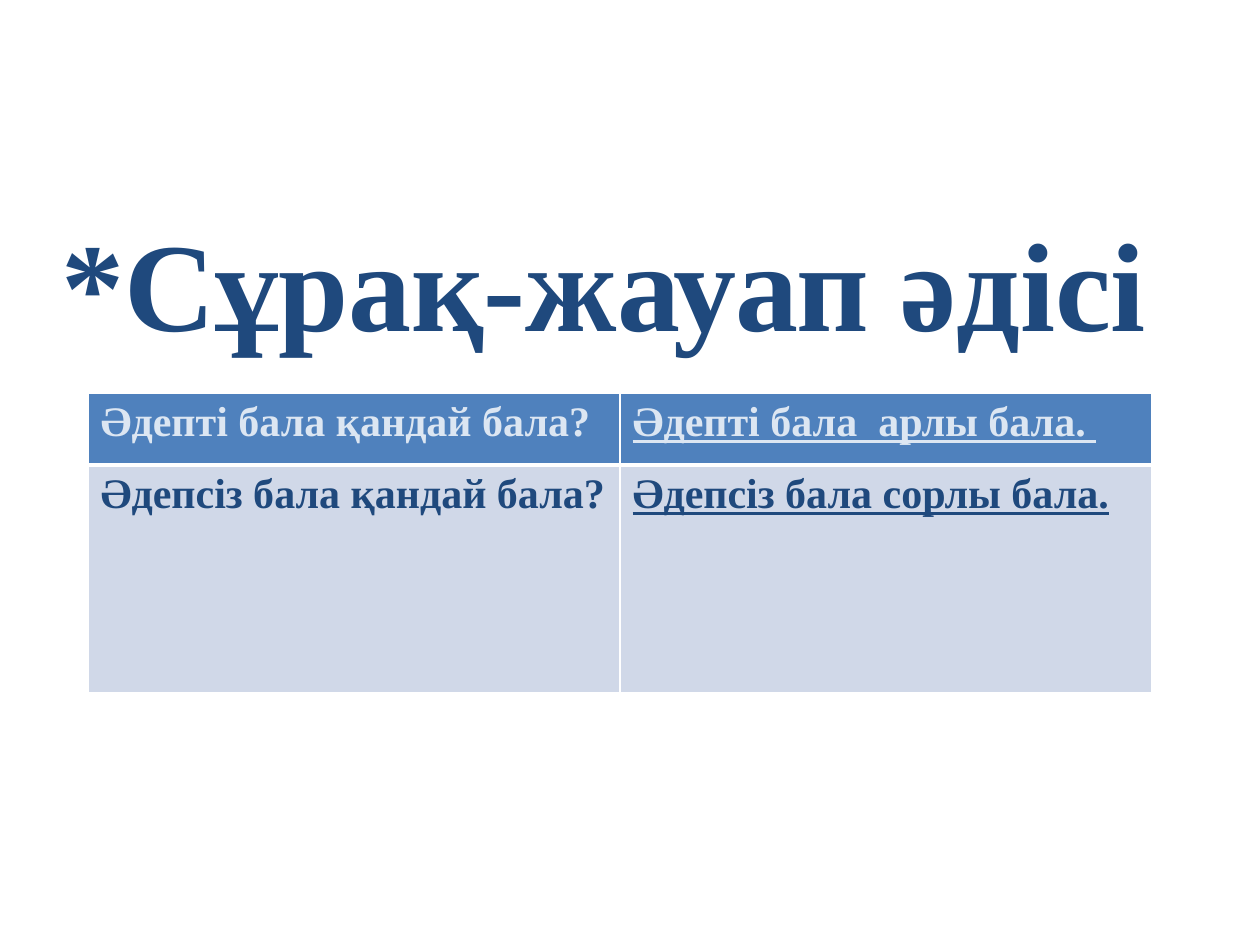
from lxml import etree
from pptx import Presentation
from pptx import util as u
from pptx.dml.color import RGBColor
from pptx.enum import text
from pptx.oxml.ns import qn

PX = u.Inches(1) / 126
FONT = "Times New Roman"
NAVY, PALE, WHITE = "1F497D", "DCE6F2", "FFFFFF"
HEADER_FILL, BODY_FILL = "4F81BD", "D0D8E8"
QUESTIONS = [
    ("Әдепті бала қандай бала?", "Әдепті бала  арлы бала. "),
    ("Әдепсіз бала қандай бала?", "Әдепсіз бала сорлы бала."),
]


def px(n):
    return u.Emu(round(n * PX))


def rgb(value):
    return RGBColor.from_string(value)


def style(p, size, color, underline=False):
    for r in p.runs:
        f = r.font
        f.name, f.size, f.bold = FONT, u.Pt(size), True
        f.underline = underline
        f.color.rgb = rgb(color)


def add_title(s, wording, x, y, w, h):
    tf = s.shapes.add_textbox(px(x), px(y), px(w), px(h)).text_frame
    tf.word_wrap = True
    tf.vertical_anchor = text.MSO_ANCHOR.MIDDLE
    p = tf.paragraphs[0]
    p.text = wording
    style(p, 72, NAVY)


def set_borders(cell, **widths):
    """Draw white edges; widths are points keyed by L, R, T and B."""
    tc_pr = cell._tc.get_or_add_tcPr()
    for side, width in widths.items():
        ln = etree.SubElement(tc_pr, qn(f"a:ln{side}"), w=str(u.Pt(width)))
        fill = etree.SubElement(ln, qn("a:solidFill"))
        etree.SubElement(fill, qn("a:srgbClr"), val=WHITE)


def add_question_table(s, x, y, col_w, row_heights):
    frame = s.shapes.add_table(len(QUESTIONS), 2, px(x), px(y),
                               px(2 * col_w), px(sum(row_heights)))
    table = frame.table
    for col in table.columns:
        col.width = px(col_w)
    for i, pair in enumerate(QUESTIONS):
        header = i == 0
        table.rows[i].height = px(row_heights[i])
        for j, wording in enumerate(pair):
            cell = table.cell(i, j)
            set_borders(cell, L=1, R=1, T=1 if header else 3, B=3 if header else 1)
            cell.fill.solid()
            cell.fill.fore_color.rgb = rgb(HEADER_FILL if header else BODY_FILL)
            p = cell.text_frame.paragraphs[0]
            p.text = wording
            style(p, 24, PALE if header else NAVY, underline=j == 1)


def main():
    prs = Presentation()
    prs.slide_width, prs.slide_height = px(1260), px(945)
    s = prs.slides.add_slide(prs.slide_layouts[6])
    add_title(s, "*Сұрақ-жауап әдісі", 49, 168, 1134, 227)
    add_question_table(s, 88, 393, 532, [72, 228])
    prs.save("out.pptx")


if __name__ == "__main__":
    main()
